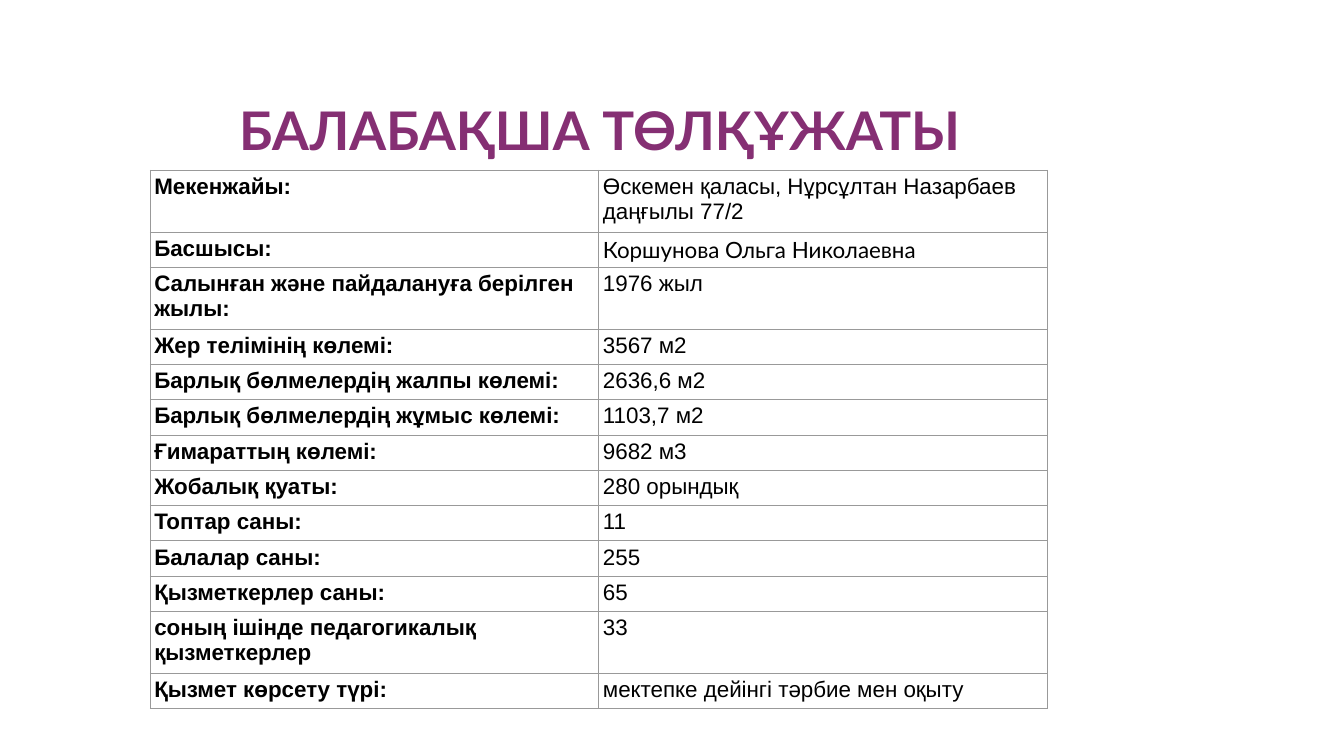
from lxml.etree import SubElement
from pptx import Presentation
from pptx.dml.color import RGBColor
from pptx.enum.text import MSO_ANCHOR, PP_ALIGN
from pptx.oxml.ns import qn
from pptx.util import Inches, Pt

HEADING = "БАЛАБАҚША ТӨЛҚҰЖАТЫ"
PASSPORT = [
    ("Мекенжайы:", "Өскемен қаласы, Нұрсұлтан Назарбаев даңғылы 77/2"),
    ("Басшысы:", "Коршунова Ольга Николаевна"),
    ("Салынған және пайдалануға берілген жылы:", "1976 жыл"),
    ("Жер телімінің көлемі:", "3567 м2"),
    ("Барлық бөлмелердің жалпы көлемі:", "2636,6 м2"),
    ("Барлық бөлмелердің жұмыс көлемі:", "1103,7 м2"),
    ("Ғимараттың көлемі:", "9682 м3"),
    ("Жобалық қуаты:", "280 орындық"),
    ("Топтар саны:", "11"),
    ("Балалар саны:", "255"),
    ("Қызметкерлер саны:", "65"),
    ("соның ішінде педагогикалық қызметкерлер", "33"),
    ("Қызмет көрсету түрі:", "мектепке дейінгі тәрбие мен оқыту"),
]
HEAD_NAME = "Коршунова Ольга Николаевна"
TWO_LINE_ROWS = {0, 2, 11}
COLORS = {"heading": "852F73", "outline": "5E1A50", "text": "000000",
          "cell": "FFFFFF", "border": "999999"}

SLIDE_W, SLIDE_H = 13.33, 7.5
TABLE_LEFT, TABLE_TOP, COLUMN_W = 1.49, 1.69, 4.45
ROW_H, TWO_LINE_H = 0.35, 0.61
CELL_MARGIN = Inches(0.04)
CELL_FORMAT = {"margin_left": CELL_MARGIN, "margin_right": CELL_MARGIN,
               "margin_top": CELL_MARGIN, "margin_bottom": CELL_MARGIN,
               "vertical_anchor": MSO_ANCHOR.TOP}
HEADING_FORMAT = {"word_wrap": True, "vertical_anchor": MSO_ANCHOR.BOTTOM,
                  "margin_left": Inches(0.05), "margin_right": Inches(0.05),
                  "margin_top": 0, "margin_bottom": 0}


def apply_format(target, values):
    for name, value in values.items():
        setattr(target, name, value)


def write(paragraph, text, color, **font_format):
    run = paragraph.add_run()
    run.text = text
    apply_format(run.font, font_format)
    run.font.color.rgb = RGBColor.from_string(COLORS[color])
    return run


def add_line(parent, tag, width, color):
    line = SubElement(parent, qn(tag), w=str(int(width)))
    fill = SubElement(line, qn("a:solidFill"))
    SubElement(fill, qn("a:srgbClr"), val=COLORS[color])
    return line


def add_heading(slide):
    heading = slide.shapes.add_textbox(
        Inches(0.67), Inches(0.35), Inches(10.56), Inches(1.25)).text_frame
    apply_format(heading, HEADING_FORMAT)
    paragraph = heading.paragraphs[0]
    paragraph.alignment = PP_ALIGN.CENTER
    run = write(paragraph, HEADING, "heading", name="Lato", size=Pt(38), bold=True)
    properties = run.font._element if hasattr(run.font, "_element") else run._r.get_or_add_rPr()
    properties.insert(0, add_line(properties, "a:ln", Pt(0.04), "outline"))


def add_passport(slide):
    heights = [TWO_LINE_H if row in TWO_LINE_ROWS else ROW_H
               for row in range(len(PASSPORT))]
    passport = slide.shapes.add_table(
        len(PASSPORT), 2, Inches(TABLE_LEFT), Inches(TABLE_TOP),
        Inches(2 * COLUMN_W), Inches(sum(heights))).table
    apply_format(passport, {"first_row": False, "horz_banding": False})
    for column in passport.columns:
        column.width = Inches(COLUMN_W)
    for row, (entry, height) in enumerate(zip(PASSPORT, heights)):
        passport.rows[row].height = Inches(height)
        for column, text in enumerate(entry):
            cell = passport.cell(row, column)
            apply_format(cell, CELL_FORMAT)
            for side in "LRTB":
                add_line(cell._tc.get_or_add_tcPr(), f"a:ln{side}", Pt(0.75), "border")
            cell.fill.solid()
            cell.fill.fore_color.rgb = RGBColor.from_string(COLORS["cell"])
            write(cell.text_frame.paragraphs[0], text, "text",
                  name="Lato" if text == HEAD_NAME else "Arial",
                  size=Pt(16), bold=column == 0)


def main():
    deck = Presentation()
    apply_format(deck, {"slide_width": Inches(SLIDE_W), "slide_height": Inches(SLIDE_H)})
    slide = deck.slides.add_slide(deck.slide_layouts[6])
    add_heading(slide)
    add_passport(slide)
    deck.save("out.pptx")


if __name__ == "__main__":
    main()
